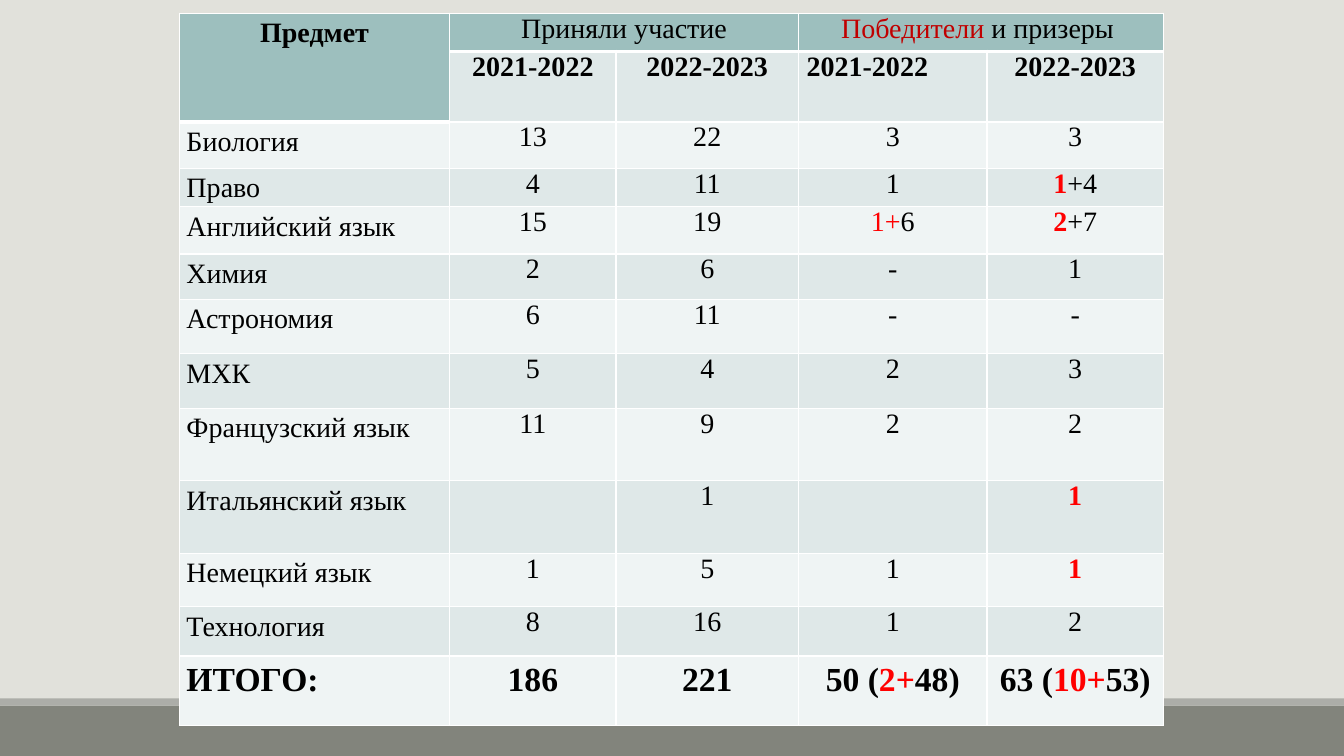
from lxml import etree
from pptx import Presentation
from pptx.dml.color import RGBColor
from pptx.enum.shapes import MSO_SHAPE
from pptx.enum.text import PP_ALIGN
from pptx.oxml.ns import qn
from pptx.util import Inches, Pt

RECTANGLE = MSO_SHAPE.RECTANGLE
LEFT, CENTER = PP_ALIGN.LEFT, PP_ALIGN.CENTER

COLORS = {
    "background": "E1E1DB",
    "floor": "82847C",
    "floor_edge": "ACADA8",
    "header": "9DBFBE",
    "band_dark": "DFE8E8",
    "band_light": "EFF4F4",
    "border": "FFFFFF",
    "text": "000000",
    "red": "FF0000",
    "dark_red": "C00000",
}

COLUMN_WIDTHS = [2.68, 1.65, 1.81, 1.87, 1.75]
ROW_HEIGHTS = [0.38, 0.7, 0.46, 0.38, 0.47, 0.45, 0.54, 0.54, 0.72, 0.72, 0.53, 0.49, 0.69]


def red(text, bold=True):
    return text, "red", bold


ROWS = [
    ["Предмет", "Приняли участие", "", [("Победители", "dark_red", False), " и призеры "], ""],
    ["", "2021-2022", "2022-2023", "2021-2022", "2022-2023"],
    ["Биология", "13", "22", "3", "3"],
    ["Право", "4", "11", "1", [red("1"), "+4"]],
    ["Английский язык", "15", "19", [red("1+", False), "6"], [red("2"), "+7"]],
    ["Химия", "2", "6", "-", "1"],
    ["Астрономия", "6", "11", "-", "-"],
    ["МХК", "5", "4", "2", "3"],
    ["Французский язык", "11", "9", "2", "2"],
    ["Итальянский язык", "", "1", "", [red("1")]],
    ["Немецкий язык", "1", "5", "1", [red("1")]],
    ["Технология", "8", "16", "1", "2"],
    ["ИТОГО:", "186", "221", ["50 (", red("2+"), "48)"], ["63 (", red("10+"), "53)"]],
]
TOTAL_ROW = len(ROWS) - 1
MERGES = [((0, 0), (1, 0)), ((0, 1), (0, 2)), ((0, 3), (0, 4))]


class SlideBuilder:
    """Holds the text style and the current slide, and draws its elements."""

    font_name = "Times New Roman"

    def __init__(self, presentation):
        self.slide = presentation.slides.add_slide(presentation.slide_layouts[6])

    def color(self, name):
        return RGBColor.from_string(COLORS[name])

    def background(self, color):
        fill = self.slide.background.fill
        fill.solid()
        fill.fore_color.rgb = self.color(color)

    def bar(self, top, height, color):
        shape = self.slide.shapes.add_shape(
            RECTANGLE, 0, Inches(top), Inches(13.33), Inches(height))
        shape.shadow.inherit = False
        shape.fill.solid()
        shape.fill.fore_color.rgb = self.color(color)
        shape.line.fill.background()

    def borders(self, cell, bottom_width):
        properties = cell._tc.get_or_add_tcPr()
        for side, width in (("L", 1), ("R", 1), ("T", 1), ("B", bottom_width)):
            line = etree.SubElement(properties, qn(f"a:ln{side}"), w=str(Pt(width)))
            fill = etree.SubElement(line, qn("a:solidFill"))
            etree.SubElement(fill, qn("a:srgbClr"), val=COLORS["border"])

    def cell_text(self, cell, pieces, size, bold, alignment, spacing):
        paragraph = cell.text_frame.paragraphs[0]
        paragraph.alignment = alignment
        paragraph.line_spacing = spacing
        paragraph.font.size = Pt(size)
        for piece in [pieces] if isinstance(pieces, str) else pieces:
            text, color, heavy = (piece, "text", bold) if isinstance(piece, str) else piece
            run = paragraph.add_run()
            run.text = text
            run.font.name = self.font_name
            run.font.size = Pt(size)
            run.font.bold = heavy
            run.font.color.rgb = self.color(color)

    def cell(self, cell, row, column, pieces):
        is_header = row == 0 or (row == 1 and column == 0)
        is_total = row == TOTAL_ROW
        is_subject = column == 0
        self.borders(cell, 3 if row == 0 else 1)
        band = "band_dark" if row % 2 else "band_light"
        cell.fill.solid()
        cell.fill.fore_color.rgb = self.color("header" if is_header else band)
        side_margin = 0.08 if row < 2 and not is_subject else 0.07
        cell.margin_left = cell.margin_right = Inches(side_margin)
        cell.margin_top = cell.margin_bottom = 0
        if pieces:
            bold = row == 1 or is_total or (row == 0 and is_subject)
            left_aligned = (is_subject and row > 1) or (row, column) == (1, 3)
            self.cell_text(cell, pieces, 24 if is_total else 20, bold,
                           LEFT if left_aligned else CENTER,
                           1.15 if is_subject or is_total else 1.0)

    def table(self, left, top, rows, widths, heights, merges):
        frame = self.slide.shapes.add_table(
            len(rows), len(widths), Inches(left), Inches(top),
            Inches(sum(widths)), Inches(sum(heights)))
        table = frame.table
        for column, width in zip(table.columns, widths):
            column.width = Inches(width)
        for row, height in zip(table.rows, heights):
            row.height = Inches(height)
        for start, end in merges:
            table.cell(*start).merge(table.cell(*end))
        for row, values in enumerate(rows):
            for column, pieces in enumerate(values):
                self.cell(table.cell(row, column), row, column, pieces)


def main():
    presentation = Presentation()
    presentation.slide_width = Inches(13.33)
    presentation.slide_height = Inches(7.5)
    builder = SlideBuilder(presentation)
    builder.background("background")
    builder.bar(7, 0.5, "floor")
    builder.bar(6.93, 0.07, "floor_edge")
    builder.table(1.78, 0.13, ROWS, COLUMN_WIDTHS, ROW_HEIGHTS, MERGES)
    presentation.save("out.pptx")


if __name__ == "__main__":
    main()
